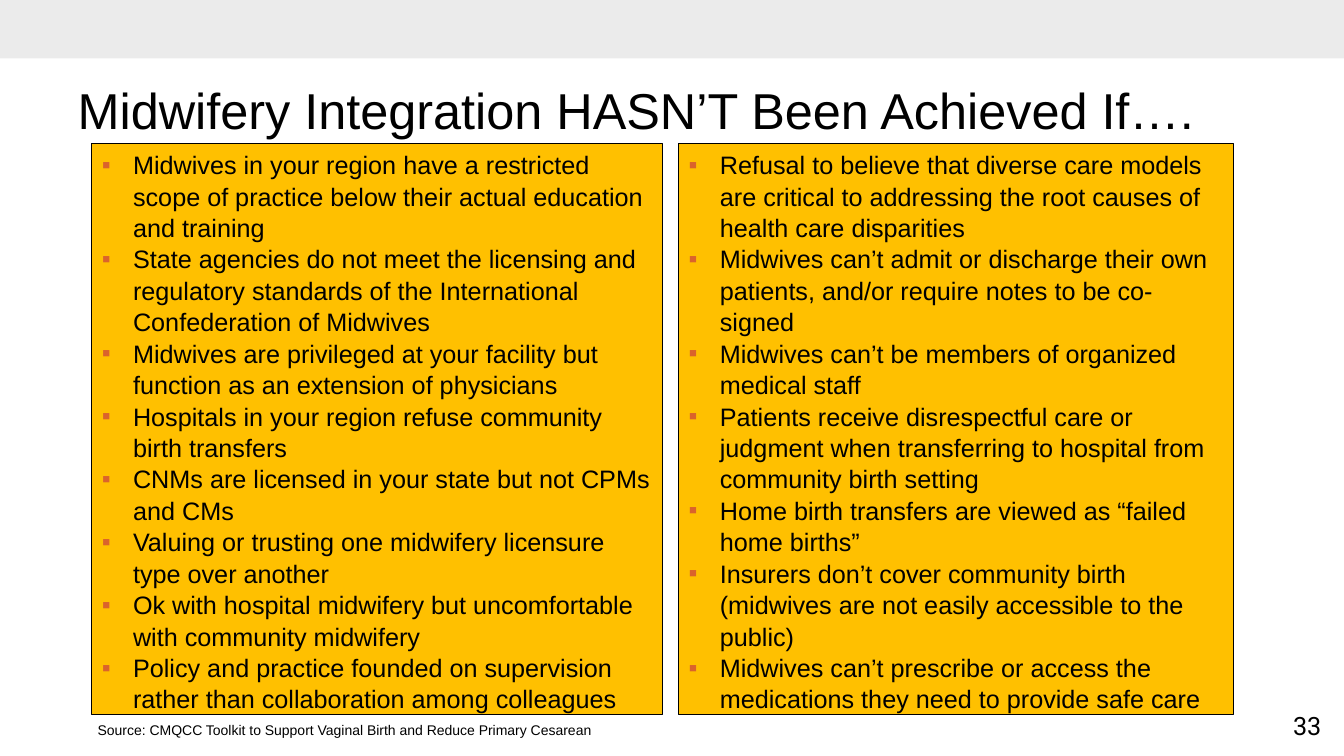
from dataclasses import dataclass

from lxml import etree
from pptx import Presentation
from pptx.dml.color import RGBColor
from pptx.enum.shapes import MSO_SHAPE
from pptx.enum.text import MSO_ANCHOR, MSO_AUTO_SIZE, PP_ALIGN
from pptx.oxml.ns import qn
from pptx.util import Pt

RECT = MSO_SHAPE.RECTANGLE
TOP, MIDDLE = MSO_ANCHOR.TOP, MSO_ANCHOR.MIDDLE
LEFT, CENTER = PP_ALIGN.LEFT, PP_ALIGN.CENTER
FIXED = MSO_AUTO_SIZE.NONE
PX = 9144
TWO_LISTS = 3


@dataclass(frozen=True)
class Theme:
    ink: str = "000000"
    band: str = "E3E3E3"
    panel: str = "FFC000"
    mark: str = "DA632C"
    face: str = "Arial"
    digits: str = "Roboto"
    head: int = 36
    body: int = 18
    note: int = 10


THEME = Theme()
HEAD = "Midwifery Integration HASN’T Been Achieved If…."
SOURCE = "Source: CMQCC Toolkit to Support Vaginal Birth and Reduce Primary Cesarean"
SIGNS = [
    [
        "Midwives in your region have a restricted scope of practice below their actual education and training",
        "State agencies do not meet the licensing and regulatory standards of the International Confederation of Midwives",
        "Midwives are privileged at your facility but function as an extension of physicians",
        "Hospitals in your region refuse community birth transfers",
        "CNMs are licensed in your state but not CPMs and CMs",
        "Valuing or trusting one midwifery licensure type over another",
        "Ok with hospital midwifery but uncomfortable with community midwifery",
        "Policy and practice founded on supervision rather than collaboration among colleagues",
    ],
    [
        "Refusal to believe that diverse care models are critical to addressing the root causes of health care disparities",
        "Midwives can’t admit or discharge their own patients, and/or require notes to be co-signed",
        "Midwives can’t be members of organized medical staff",
        "Patients receive disrespectful care or judgment when transferring to hospital from community birth setting",
        "Home birth transfers are viewed as “failed home births”",
        "Insurers don’t cover community birth (midwives are not easily accessible to the public)",
        "Midwives can’t prescribe or access the medications they need to provide safe care",
    ],
]


def color(code):
    return RGBColor.from_string(code)


def scale(box):
    return [n * PX for n in box]


def place(shape, box):
    shape.left, shape.top, shape.width, shape.height = scale(box)


def style(para, size, align, face=THEME.face):
    para.alignment = align
    for run in para.runs:
        run.font.size = Pt(size)
        run.font.name = face
        run.font.color.rgb = color(THEME.ink)


def bullet(para):
    props = para._p.get_or_add_pPr()
    props.set("marL", str(31 * PX))
    props.set("indent", str(-31 * PX))
    tint = etree.SubElement(props, qn("a:buClr"))
    etree.SubElement(tint, qn("a:srgbClr"), val=THEME.mark)
    etree.SubElement(props, qn("a:buFont"), typeface=THEME.face)
    etree.SubElement(props, qn("a:buChar"), char="▪")


def band(slide, box):
    bar = slide.shapes.add_shape(RECT, *scale(box))
    bar.shadow.inherit = False
    bar.fill.solid()
    bar.fill.fore_color.rgb = color(THEME.band)
    bar.line.fill.background()
    tint = bar.fill._xPr.find(".//" + qn("a:srgbClr"))
    etree.SubElement(tint, qn("a:alpha"), val="70000")


def title(slide, box):
    shape = slide.shapes.title
    place(shape, box)
    frame = shape.text_frame
    frame.text = HEAD
    frame.auto_size = FIXED
    frame.vertical_anchor = MIDDLE
    style(frame.paragraphs[0], THEME.head, LEFT)


def panel(shape, box, items):
    place(shape, box)
    shape.fill.solid()
    shape.fill.fore_color.rgb = color(THEME.panel)
    shape.line.color.rgb = color(THEME.ink)
    shape.line.width = Pt(0.75)
    frame = shape.text_frame
    frame.text = "\n".join(items)
    frame.auto_size = FIXED
    frame.vertical_anchor = TOP
    for para in frame.paragraphs:
        bullet(para)
        para.space_before = Pt(0)
        para.line_spacing = 1.04
        style(para, THEME.body, LEFT)


def label(slide, box, text, size, face):
    frame = slide.shapes.add_textbox(*scale(box)).text_frame
    frame.word_wrap = False
    frame.text = text
    style(frame.paragraphs[0], size, CENTER, face)


def main():
    deck = Presentation()
    deck.slide_width, deck.slide_height = scale((1333, 750))
    slide = deck.slides.add_slide(deck.slide_layouts[TWO_LISTS])
    band(slide, (0, 0, 1333, 58))
    title(slide, (67, 58, 1133, 100))
    left, top, high, gap = 91, 142, 567, 16
    for slot, wide, items in zip((1, 2), (566, 550), SIGNS):
        panel(slide.placeholders[slot], (left, top, wide, high), items)
        left += wide + gap
    label(slide, (83, 711, 517, 27), SOURCE, THEME.note, THEME.face)
    label(slide, (1271, 700, 51, 40), "33", THEME.body, THEME.digits)
    deck.save("out.pptx")


if __name__ == "__main__":
    main()
